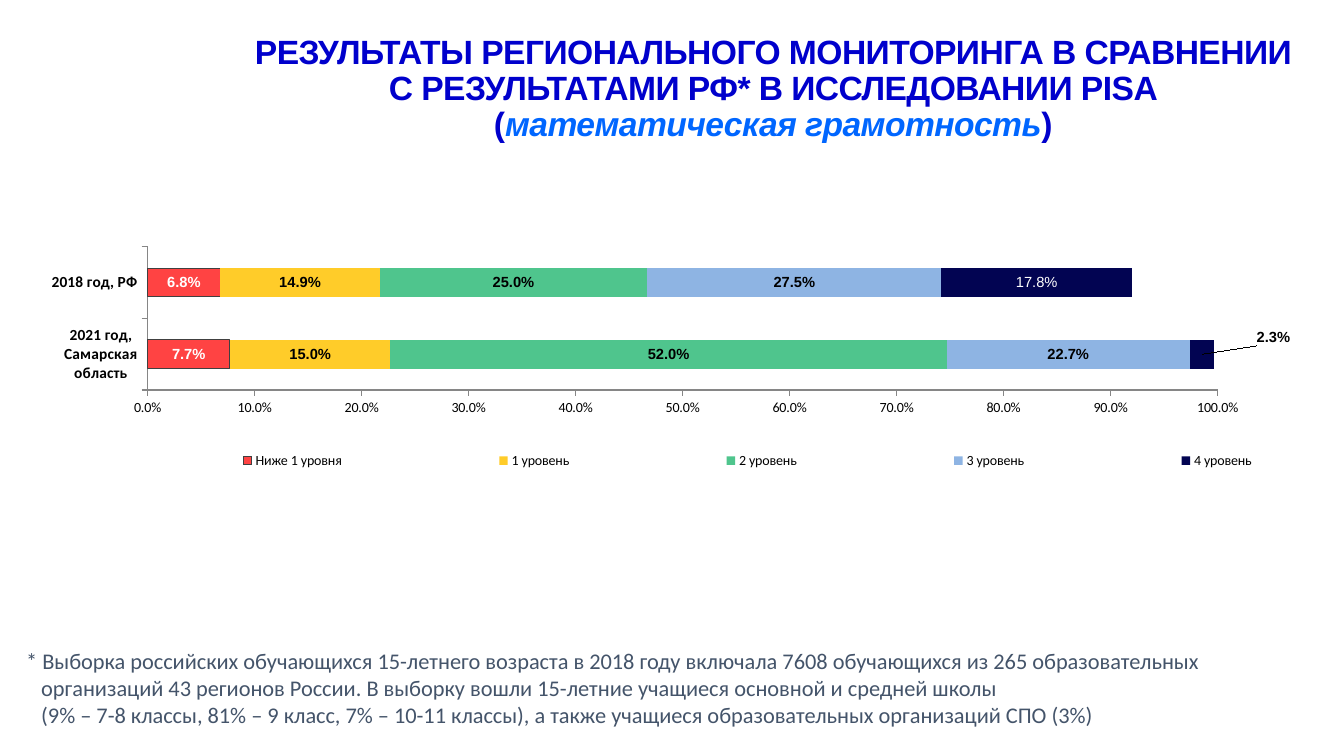
from lxml import etree
from pptx import Presentation
from pptx.chart.data import CategoryChartData
from pptx.dml.color import RGBColor
from pptx.enum.chart import XL_CHART_TYPE, XL_LEGEND_POSITION, XL_TICK_MARK
from pptx.enum.text import MSO_ANCHOR, PP_ALIGN
from pptx.oxml.ns import qn
from pptx.util import Cm, Pt

STACKED_BAR = XL_CHART_TYPE.BAR_STACKED
LEGEND_BOTTOM = XL_LEGEND_POSITION.BOTTOM
TICK_OUTSIDE = XL_TICK_MARK.OUTSIDE
MIDDLE = MSO_ANCHOR.MIDDLE
CENTER = PP_ALIGN.CENTER
PERCENT = "0.0%"


def set_font(font, size, color, name="Calibri", bold=False, italic=False):
    font.size = Pt(size)
    font.name = name
    font.bold = bold
    font.italic = italic
    font.color.rgb = RGBColor.from_string(color)


def add_layout(parent, index, **values):
    """Insert a manual chart layout as the child of parent at index."""
    layout = etree.Element(qn("c:layout"))
    manual = etree.SubElement(layout, qn("c:manualLayout"))
    for tag, value in values.items():
        etree.SubElement(manual, qn("c:" + tag)).set("val", str(value))
    for old_layout in parent.findall(qn("c:layout")):
        parent.remove(old_layout)
    parent.insert(index, layout)


presentation = Presentation()
presentation.slide_width = Cm(33.86)
presentation.slide_height = Cm(19.05)
slide = presentation.slides.add_slide(presentation.slide_layouts[6])

# Title
title = slide.shapes.add_textbox(Cm(5.66), Cm(0.61), Cm(27.64), Cm(3.3))
title.text_frame.word_wrap = True
title.text_frame.vertical_anchor = MIDDLE
paragraph = title.text_frame.paragraphs[0]
paragraph.alignment = CENTER
paragraph.line_spacing = 0.9
title_runs = [
    ("РЕЗУЛЬТАТЫ РЕГИОНАЛЬНОГО МОНИТОРИНГА В СРАВНЕНИИ", "0000CC", False, True),
    ("С РЕЗУЛЬТАТАМИ РФ* В ИССЛЕДОВАНИИ PISA", "0000CC", False, True),
    ("(", "0000CC", False, False),
    ("математическая грамотность", "0066FF", True, False),
    (")", "0000CC", False, False),
]
for text, color, italic, ends_line in title_runs:
    run = paragraph.add_run()
    run.text = text
    set_font(run.font, 24, color, name="Arial", bold=True, italic=italic)
    run.font._element.set("spc", "-40")
    if ends_line:
        paragraph.add_line_break()

# Chart data: name, values, bar color, label color
levels = [
    ("Ниже 1 уровня", (0.077, 0.068), "FF4343", "FFFFFF"),
    ("1 уровень", (0.15, 0.149), "FFCC29", "000000"),
    ("2 уровень", (0.52, 0.25), "4FC58D", "000000"),
    ("3 уровень", (0.227, 0.275), "8EB4E3", "000000"),
    ("4 уровень", (0.023, 0.178), "020452", "000000"),
]
chart_data = CategoryChartData(number_format=PERCENT)
chart_data.categories = ["2021 год, Самарская область", "2018 год, РФ"]
for name, values, _, _ in levels:
    chart_data.add_series(name, values)
chart = slide.shapes.add_chart(
    STACKED_BAR, Cm(0.84), Cm(5.82), Cm(35.99), Cm(7.06), chart_data).chart
set_font(chart.font, 10, "000000")
chart.has_title = False
plot = chart.plots[0]
plot.gap_width = 150
plot.overlap = 100
plot.vary_by_categories = False
add_layout(chart._chartSpace.chart.plotArea, 0, layoutTarget="inner", xMode="edge",
           yMode="edge", x=0.08, y=0.057, w=0.749, h=0.511)

# Bars and their labels
for series, (_, _, color, label_color) in zip(plot.series, levels):
    series.format.fill.solid()
    series.format.fill.fore_color.rgb = RGBColor.from_string(color)
    labels = series.data_labels
    labels.show_value = True
    labels.number_format = PERCENT
    labels.number_format_is_linked = False
    set_font(labels.font, 10.5, label_color, name="Arial", bold=True)

lowest_level = plot.series[0]
lowest_level.format.line.color.rgb = RGBColor.from_string("404040")
lowest_level.format.line.width = Pt(0.75)

# The small last value stands beside its bar, the other is white on dark blue
top_level = plot.series[4]
outside_label = top_level.points[0].data_label
set_font(outside_label.font, 10.5, "000000", name="Arial", bold=True)
add_layout(top_level.data_labels._element.find(qn("c:dLbl")), 1, x=0.05, y=-0.06)
set_font(top_level.points[1].data_label.font, 10.5, "FFFFFF", name="Arial")

# Axes
for axis in (chart.category_axis, chart.value_axis):
    axis.major_tick_mark = TICK_OUTSIDE
    axis.format.line.color.rgb = RGBColor.from_string("868686")
    axis.format.line.width = Pt(0.75)
chart.category_axis.has_major_gridlines = False
set_font(chart.category_axis.tick_labels.font, 11, "000000", bold=True)
value_axis = chart.value_axis
value_axis.minimum_scale = 0
value_axis.maximum_scale = 1
value_axis.major_unit = 0.1
value_axis.tick_labels.number_format = PERCENT
value_axis.tick_labels.number_format_is_linked = False
set_font(value_axis.tick_labels.font, 10, "000000")
value_axis.has_major_gridlines = True
value_axis.major_gridlines.format.line.color.rgb = RGBColor.from_string("FFFFFF")
value_axis.major_gridlines.format.line.width = Pt(0.75)

# Legend
chart.has_legend = True
chart.legend.position = LEGEND_BOTTOM
chart.legend.include_in_layout = False
set_font(chart.legend.font, 10, "000000")
add_layout(chart.legend._element, 1, xMode="edge", yMode="edge",
           x=0.04, y=0.77, w=0.92, h=0.1)

# Footnote with a hanging asterisk
footnote = slide.shapes.add_textbox(Cm(0.41), Cm(16.18), Cm(32.49), Cm(2.31))
footnote.text_frame.word_wrap = True
footnote_lines = [
    "* Выборка российских обучающихся 15-летнего возраста в 2018 году включала 7608 обучающихся из 265 образовательных",
    "организаций 43 регионов России. В выборку вошли 15-летние учащиеся основной и средней школы",
    "(9% – 7-8 классы, 81% – 9 класс, 7% – 10-11 классы), а также учащиеся образовательных организаций СПО (3%)",
]
for number, text in enumerate(footnote_lines):
    frame = footnote.text_frame
    paragraph = frame.add_paragraph() if number else frame.paragraphs[0]
    properties = paragraph._p.get_or_add_pPr()
    properties.set("marL", str(Cm(0.38)))
    properties.set("indent", str(0 if number else -Cm(0.38)))
    run = paragraph.add_run()
    run.text = text
    set_font(run.font, 16, "44546A")

presentation.save("out.pptx")
